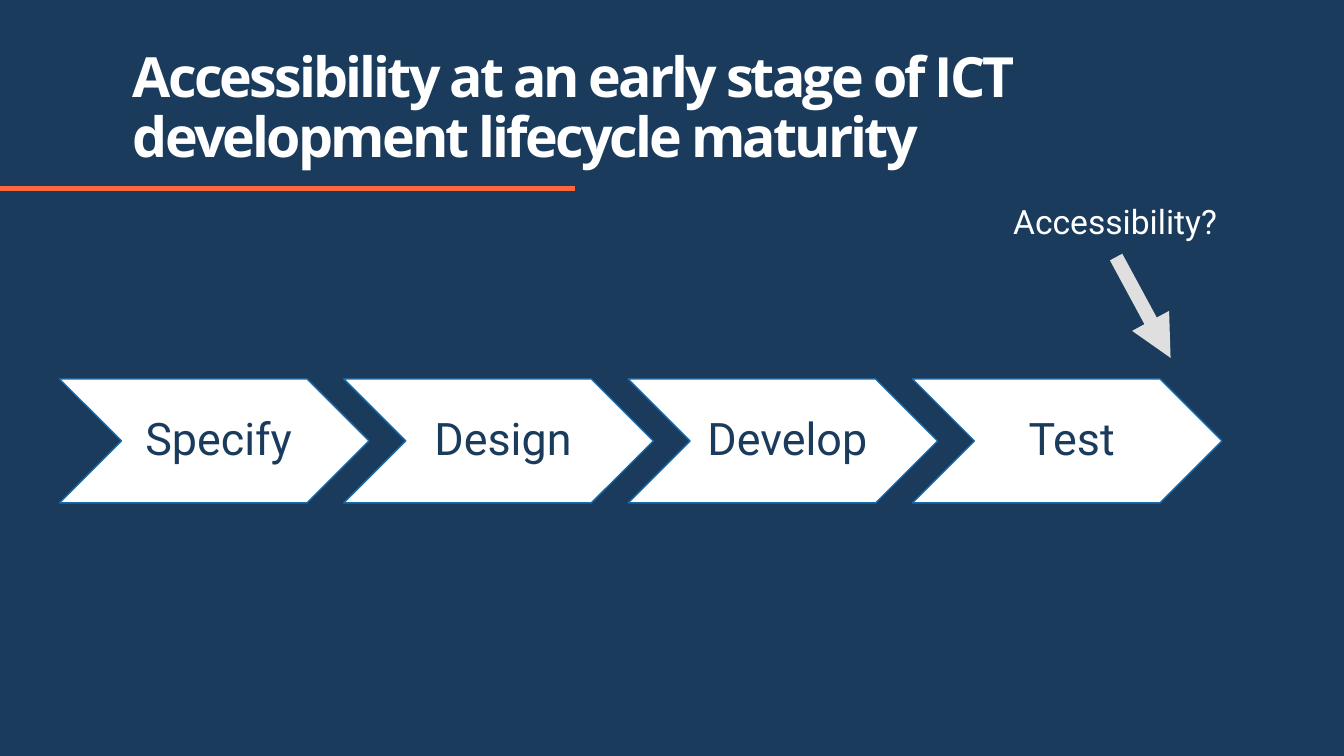
from lxml import etree
from pptx import Presentation
from pptx.dml.color import RGBColor
from pptx.enum.shapes import MSO_CONNECTOR, MSO_SHAPE
from pptx.enum.text import MSO_ANCHOR, PP_ALIGN
from pptx.oxml.ns import qn
from pptx.util import Inches, Pt

TITLE = "Accessibility at an early stage of ICT development lifecycle maturity"
STAGES = ["Specify", "Design", "Develop", "Test"]
QUESTION = "Accessibility?"

COLORS = {
    "navy": "1A3B5B",
    "orange": "FE663B",
    "white": "FFFFFF",
    "blue": "196AAB",
    "grey": "DFDFDF",
}

STAGE_LEFT, STAGE_TOP, STAGE_W, STAGE_H = 0.59, 3.76, 3.07, 1.23
STAGE_STEP = 2.82


def color(name):
    return RGBColor.from_string(COLORS[name])


def write(sp, text, font, size, color_name, bold=False):
    tf = sp.text_frame
    tf.word_wrap = True
    p = tf.paragraphs[0]
    p.text = text
    p.font.name = font
    p.font.size = Pt(size)
    p.font.bold = bold
    p.font.color.rgb = color(color_name)
    return tf, p


def add_text(slide, box, *style, **options):
    sp = slide.shapes.add_textbox(*map(Inches, box))
    return write(sp, *style, **options)


def add_line(slide, ends, color_name, width):
    line = slide.shapes.add_connector(MSO_CONNECTOR.STRAIGHT, *map(Inches, ends))
    line.line.color.rgb = color(color_name)
    line.line.width = Pt(width)
    etree.SubElement(line._element.spPr, qn("a:effectLst"))
    return line


def add_stage(slide, index, name):
    left = STAGE_LEFT + index * STAGE_STEP
    sp = slide.shapes.add_shape(
        MSO_SHAPE.CHEVRON, *map(Inches, (left, STAGE_TOP, STAGE_W, STAGE_H)))
    sp.shadow.inherit = False
    sp.fill.solid()
    sp.fill.fore_color.rgb = color("white")
    sp.line.color.rgb = color("blue")
    sp.line.width = Pt(1)
    tf, p = write(sp, name, "Roboto", 32, "navy")
    tf.vertical_anchor = MSO_ANCHOR.MIDDLE
    tf.margin_left = Inches(0.14)
    tf.margin_right = Inches(0.05)
    p.alignment = PP_ALIGN.CENTER
    p.line_spacing = 0.9


def main():
    prs = Presentation()
    prs.slide_width, prs.slide_height = Inches(13.33), Inches(7.5)
    slide = prs.slides.add_slide(prs.slide_layouts[6])
    slide.background.fill.solid()
    slide.background.fill.fore_color.rgb = color("navy")

    add_line(slide, (0, 1.87, 5.7, 1.87), "orange", 3)
    tf, p = add_text(slide, (1.22, 0.28, 9.39, 1.45), TITLE,
                     "Open Sans", 39.6, "white", bold=True)
    tf.vertical_anchor = MSO_ANCHOR.BOTTOM
    p.line_spacing = 0.9
    p.runs[0]._r.get_or_add_rPr().set("spc", "-200")

    for i, name in enumerate(STAGES):
        add_stage(slide, i, name)

    add_text(slide, (9.95, 1.94, 2.77, 0.5), QUESTION, "Roboto", 24, "white")
    arrow = add_line(slide, (11.07, 2.55, 11.61, 3.55), "grey", 10)
    etree.SubElement(arrow.line._get_or_add_ln(), qn("a:tailEnd"), type="triangle")

    prs.save("out.pptx")


if __name__ == "__main__":
    main()
